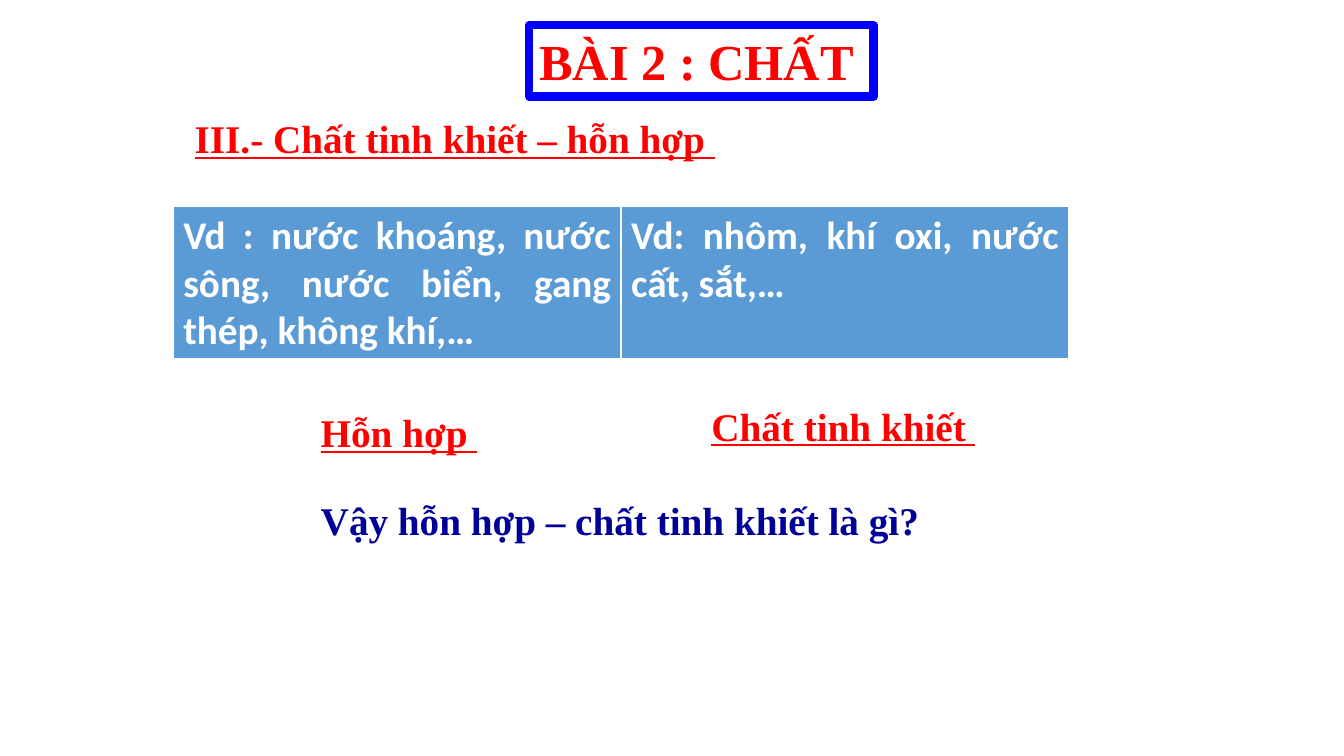
from pptx import Presentation
from pptx.dml.color import RGBColor
from pptx.enum.shapes import MSO_SHAPE
from pptx.enum.text import MSO_ANCHOR, MSO_AUTO_SIZE, PP_ALIGN
from pptx.util import Emu, Pt

PX = 9525  # 96 px to the inch
COLORS = {
    "red": "FF0000",
    "blue": "0000FF",
    "navy": "000099",
    "cell": "5B9BD5",
    "white": "FFFFFF",
}
SERIF = "Times New Roman"
SANS = "Calibri"


def color(name):
    return RGBColor.from_string(COLORS[name])


def px(*lengths):
    return [Emu(length * PX) for length in lengths]


def style(font, face, size, color_name, bold=True):
    font.name = face
    font.size = Pt(size)
    font.bold = bold
    font.color.rgb = color(color_name)


def start_line(shape):
    """Set up a one-line, left-aligned text frame and return its paragraph."""
    frame = shape.text_frame
    frame.word_wrap = False
    frame.auto_size = MSO_AUTO_SIZE.SHAPE_TO_FIT_TEXT
    frame.vertical_anchor = MSO_ANCHOR.TOP
    para = frame.paragraphs[0]
    para.alignment = PP_ALIGN.LEFT
    para.space_before = Pt(3)
    return para


def add_title(page, box):
    frame = page.shapes.add_shape(MSO_SHAPE.RECTANGLE, *px(*box))
    frame.shadow.inherit = False
    frame.fill.background()
    frame.line.color.rgb = color("blue")
    frame.line.width = Pt(6)
    para = start_line(frame)
    title = para.add_run()
    title.text = "BÀI 2 : CHẤT"
    style(title.font, SERIF, 36, "red")
    tail = para.add_run()
    tail.text = " "
    style(tail.font, SANS, 18, "blue", bold=False)


def add_label(page, box, text, color_name="red", underline=True):
    para = start_line(page.shapes.add_textbox(*px(*box)))
    para.text = text
    style(para.font, SERIF, 28, color_name)
    para.font.underline = underline


def add_examples(page, box, texts):
    table = page.shapes.add_table(1, len(texts), *px(*box)).table
    for cell, text in zip(table.rows[0].cells, texts):
        cell.fill.solid()
        cell.fill.fore_color.rgb = color("cell")
        cell.text = text
        para = cell.text_frame.paragraphs[0]
        para.alignment = PP_ALIGN.JUSTIFY
        style(para.font, SANS, 28, "white")


def build_lesson(page):
    add_title(page, (504, 24, 328, 68))
    add_label(page, (176, 104, 516, 55), "III.- Chất tinh khiết – hỗn hợp ")
    add_label(page, (296, 384, 169, 55), "Hỗn hợp ")
    add_label(page, (668, 378, 272, 55), "Chất tinh khiết ")
    add_label(page, (296, 468, 600, 55), "Vậy hỗn hợp – chất tinh khiết là gì? ",
              "navy", underline=False)
    add_examples(page, (165, 197, 853, 132), (
        "Vd : nước khoáng, nước sông, nước biển, gang thép, không khí,…",
        "Vd: nhôm, khí oxi, nước cất, sắt,…",
    ))


def main():
    deck = Presentation()
    deck.slide_width, deck.slide_height = px(1280, 720)
    build_lesson(deck.slides.add_slide(deck.slide_layouts[6]))
    deck.save("out.pptx")


if __name__ == "__main__":
    main()
